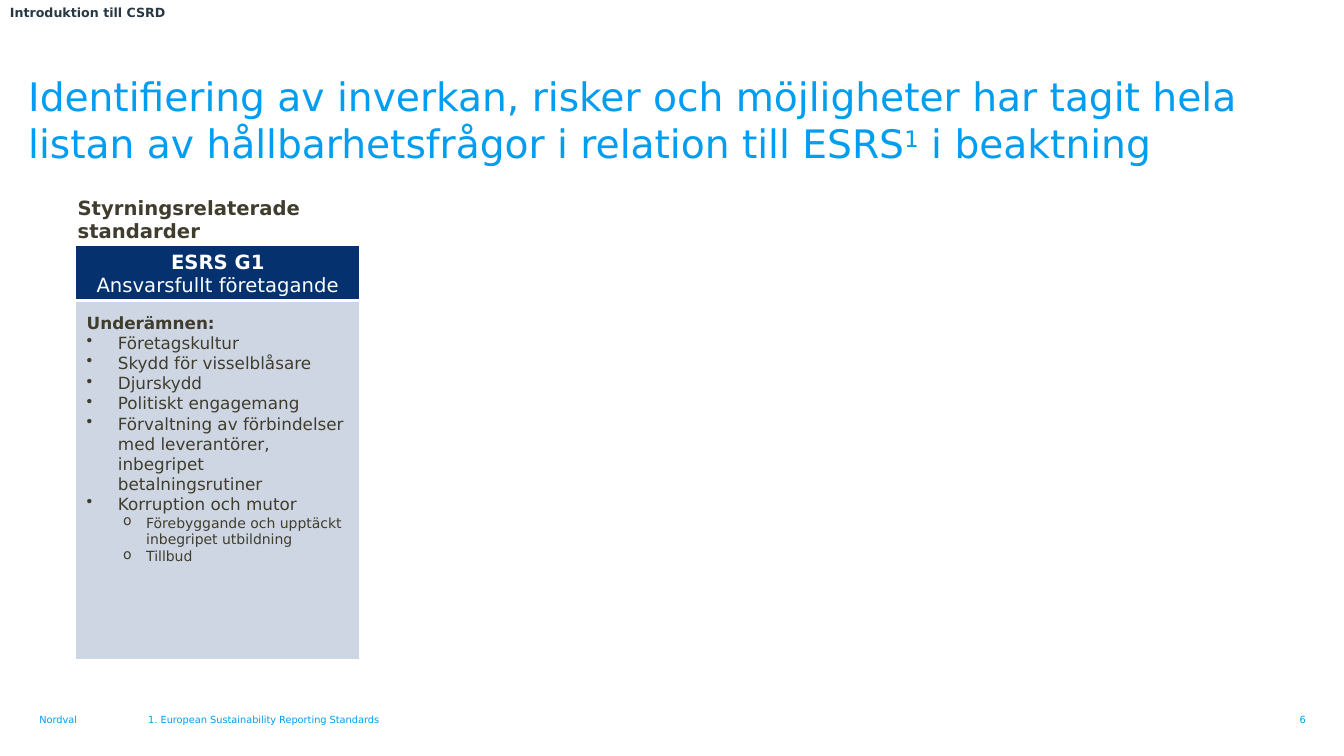
"""Build the slide on ESRS G1 governance standards and their subtopics."""
from lxml import etree
from pptx import Presentation
from pptx.dml.color import RGBColor
from pptx.enum.shapes import MSO_SHAPE
from pptx.enum.text import MSO_ANCHOR, PP_ALIGN
from pptx.oxml.ns import qn
from pptx.util import Inches, Pt

RECT = MSO_SHAPE.RECTANGLE
TOP, MIDDLE, BOTTOM = MSO_ANCHOR.TOP, MSO_ANCHOR.MIDDLE, MSO_ANCHOR.BOTTOM
LEFT, CENTER, RIGHT = PP_ALIGN.LEFT, PP_ALIGN.CENTER, PP_ALIGN.RIGHT

THEME = {
    "font": "DejaVu Sans",
    "white": RGBColor.from_string("FFFFFF"),
    "cyan": RGBColor.from_string("009DF0"),
    "navy": RGBColor.from_string("05326E"),
    "pale": RGBColor.from_string("CED6E3"),
    "brown": RGBColor.from_string("403D2E"),
    "slate": RGBColor.from_string("273943"),
    "title": Pt(28),
    "heading": Pt(14),
    "body": Pt(12),
    "sub": Pt(10),
    "tag": Pt(9),
    "footer": Pt(7),
    "border": Pt(2.25),
}


def style_run(p, text, size, color, bold=False):
    """Add a run with the given character format."""
    r = p.add_run()
    r.text = text
    for name, value in {"name": THEME["font"], "size": THEME[size], "bold": bold}.items():
        setattr(r.font, name, value)
    r.font.color.rgb = THEME[color]
    return r


def set_frame(sp, anchor, inset_x, inset_y):
    """Set the wrap, anchor and insets of a shape's text frame."""
    tf = sp.text_frame
    frame = {
        "word_wrap": True,
        "vertical_anchor": anchor,
        "margin_left": Inches(inset_x),
        "margin_right": Inches(inset_x),
        "margin_top": Inches(inset_y),
        "margin_bottom": Inches(inset_y),
    }
    for name, value in frame.items():
        setattr(tf, name, value)
    return tf


prs = Presentation()
prs.slide_width, prs.slide_height = Inches(13.33), Inches(7.5)
s = prs.slides.add_slide(prs.slide_layouts[6])

labels = [
    ((0.39, 6.96, 0.85, 0.24), "Nordval", "footer", "cyan", False, LEFT, BOTTOM, 0, 0),
    ((12.26, 7.08, 0.69, 0.12), "6", "footer", "cyan", False, RIGHT, BOTTOM, 0, 0),
    ((1.47, 7.04, 9.71, 0.16), "1. European Sustainability Reporting Standards",
     "footer", "cyan", False, LEFT, BOTTOM, 0, 0),
    ((0.69, 1.98, 2.93, 0.39), "Styrningsrelaterade standarder",
     "heading", "brown", True, LEFT, MIDDLE, 0.08, 0.08),
    ((0, 0, 8.11, 0.25), "Introduktion till CSRD",
     "tag", "slate", True, LEFT, TOP, 0.1, 0.05),
]
for box, text, size, color, bold, align, anchor, inset_x, inset_y in labels:
    sp = s.shapes.add_textbox(*map(Inches, box))
    p = set_frame(sp, anchor, inset_x, inset_y).paragraphs[0]
    p.alignment = align
    style_run(p, text, size, color, bold)

title = s.shapes.add_textbox(*map(Inches, (0.28, 0.72, 12.55, 1.02)))
p = set_frame(title, TOP, 0, 0).paragraphs[0]
style_run(p, "Identifiering av inverkan, risker och möjligheter har tagit hela "
             "listan av hållbarhetsfrågor i relation till ESRS", "title", "cyan")
note_mark = style_run(p, "1", "title", "cyan")
note_mark.font._element.set("baseline", "30000")
style_run(p, " i beaktning", "title", "cyan")

heading = [
    ("ESRS G1", "heading", True, None),
    ("Ansvarsfullt företagande", "heading", False, None),
]
subtopics = [("Underämnen:", "body", True, None)]
subtopics += [(text, "body", False, 0) for text in (
    "Företagskultur",
    "Skydd för visselblåsare",
    "Djurskydd",
    "Politiskt engagemang",
    "Förvaltning av förbindelser med leverantörer, inbegripet betalningsrutiner",
    "Korruption och mutor",
)]
subtopics += [(text, "sub", False, 1) for text in (
    "Förebyggande och upptäckt inbegripet utbildning",
    "Tillbud",
)]
bullets = [("•", 0.31, 0.31), ("o", 0.59, 0.23)]
panels = [
    (2.43, 0.56, "navy", "white", CENTER, MIDDLE, 0.04, heading),
    (2.98, 3.57, "pale", "brown", LEFT, TOP, 0.12, subtopics),
]
for top, height, fill, color, align, anchor, inset, lines in panels:
    sp = s.shapes.add_shape(RECT, *map(Inches, (0.74, top, 2.84, height)))
    sp.shadow.inherit = False
    sp.fill.solid()
    sp.fill.fore_color.rgb = THEME[fill]
    sp.line.color.rgb = THEME["white"]
    sp.line.width = THEME["border"]
    tf = set_frame(sp, anchor, inset, inset)
    for i, (text, size, bold, level) in enumerate(lines):
        p = tf.add_paragraph() if i else tf.paragraphs[0]
        p.alignment = align
        if level is not None:
            char, indent, hang = bullets[level]
            p.level = level
            pPr = p._p.get_or_add_pPr()
            pPr.set("marL", str(Inches(indent)))
            pPr.set("indent", str(-Inches(hang)))
            etree.SubElement(pPr, qn("a:buChar"), char=char)
        style_run(p, text, size, color, bold)

prs.save("out.pptx")
